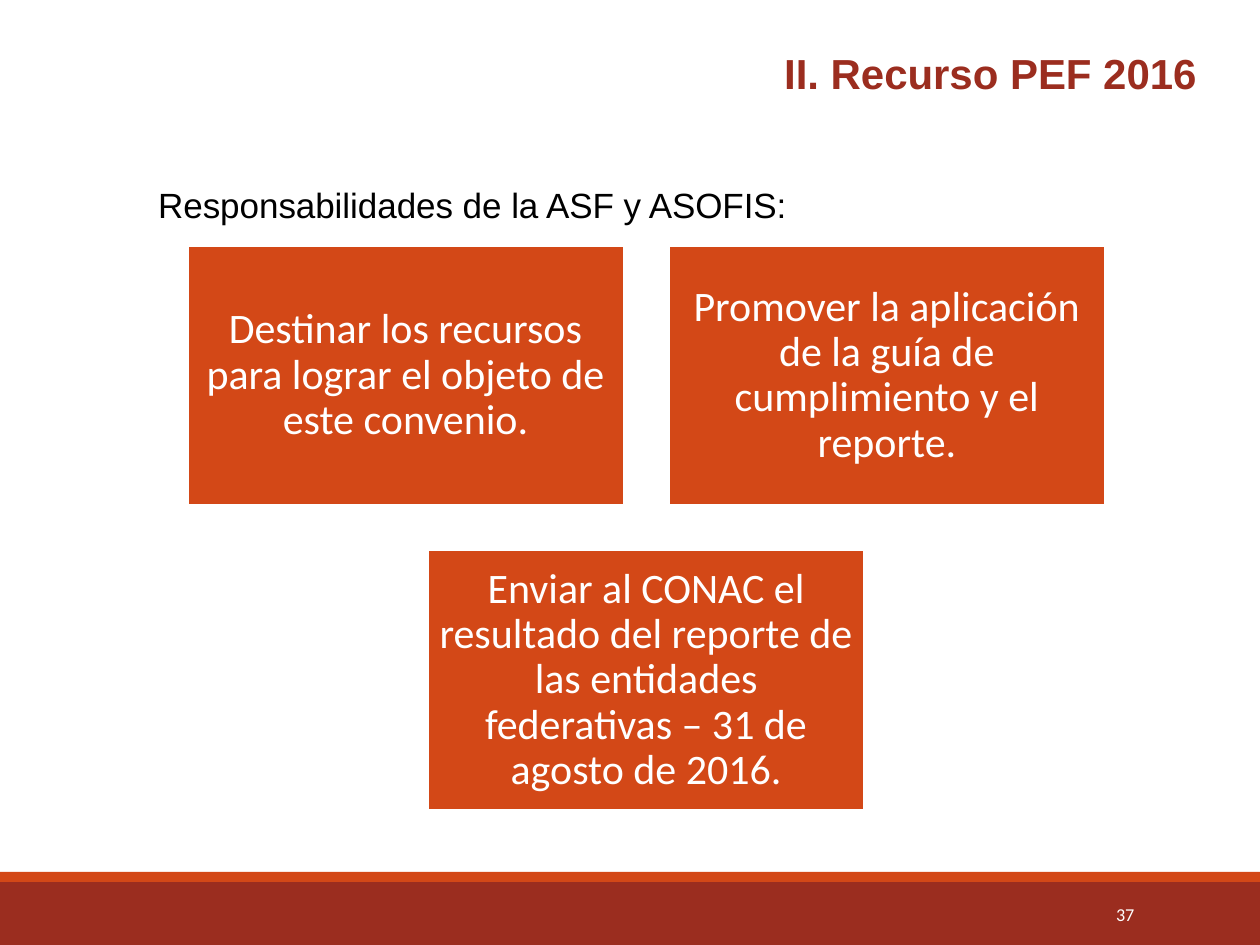
from pptx import Presentation
from pptx.dml.color import RGBColor
from pptx.enum.shapes import MSO_SHAPE
from pptx.enum.text import MSO_ANCHOR, PP_ALIGN
from pptx.util import Inches, Pt

DARK_RED = RGBColor(0x9B, 0x2D, 0x1F)
ORANGE = RGBColor(0xD3, 0x48, 0x17)
WHITE = RGBColor(0xFF, 0xFF, 0xFF)
BLACK = RGBColor(0x00, 0x00, 0x00)

# Slide and card grid, in inches
SLIDE_WIDTH, SLIDE_HEIGHT = 5, 3.75
GRID_LEFT, GRID_TOP = 0.74, 0.97
CARD_WIDTH, CARD_HEIGHT = 1.74, 1.04
GAP = 0.17

# Column, row and wording; the last card is centred under the first two
CARDS = [
    (0, 0, "Destinar los recursos para lograr el objeto de este convenio."),
    (1, 0, "Promover la aplicación de la guía de cumplimiento y el reporte."),
    (0.5, 1, "Enviar al CONAC el resultado del reporte de las entidades "
             "federativas – 31 de agosto de 2016."),
]


def write_text(shape, text, font_name, size, color, alignment, bold=False):
    text_frame = shape.text_frame
    text_frame.word_wrap = True
    text_frame.text = text
    paragraph = text_frame.paragraphs[0]
    paragraph.alignment = alignment
    font = paragraph.runs[0].font
    font.name = font_name
    font.size = Pt(size)
    font.bold = bold
    font.color.rgb = color


def add_label(slide, box, *text_style, anchor=MSO_ANCHOR.TOP, bold=False):
    label = slide.shapes.add_textbox(*map(Inches, box))
    write_text(label, *text_style, bold=bold)
    label.text_frame.vertical_anchor = anchor


def add_rectangle(slide, box, color):
    rectangle = slide.shapes.add_shape(MSO_SHAPE.RECTANGLE, *map(Inches, box))
    rectangle.shadow.inherit = False
    rectangle.fill.solid()
    rectangle.fill.fore_color.rgb = color
    rectangle.line.fill.background()
    return rectangle


def add_card(slide, column, row, text):
    left = GRID_LEFT + column * (CARD_WIDTH + GAP)
    top = GRID_TOP + row * (CARD_HEIGHT + GAP)
    card = add_rectangle(slide, (left, top, CARD_WIDTH, CARD_HEIGHT), ORANGE)
    card.line.color.rgb = WHITE
    card.line.width = Pt(1.25)
    write_text(card, text, "Calibri", 12, WHITE, PP_ALIGN.CENTER)
    text_frame = card.text_frame
    text_frame.vertical_anchor = MSO_ANCHOR.MIDDLE
    text_frame.margin_left = text_frame.margin_right = Inches(0.05)
    text_frame.margin_top = text_frame.margin_bottom = Inches(0.05)
    text_frame.paragraphs[0].line_spacing = 0.9


def main():
    presentation = Presentation()
    presentation.slide_width = Inches(SLIDE_WIDTH)
    presentation.slide_height = Inches(SLIDE_HEIGHT)
    slide = presentation.slides.add_slide(presentation.slide_layouts[6])

    # Footer bands and page number
    add_rectangle(slide, (0, 3.5, SLIDE_WIDTH, 0.25), DARK_RED)
    add_rectangle(slide, (0, 3.46, SLIDE_WIDTH, 0.04), ORANGE)
    add_label(slide, (4.06, 3.53, 0.54, 0.2), "37", "Calibri", 5.2, WHITE,
              PP_ALIGN.RIGHT, anchor=MSO_ANCHOR.MIDDLE)

    # Title and introduction
    add_label(slide, (0.91, 0.14, 3.94, 0.3), "II. Recurso PEF 2016",
              "Arial", 12, DARK_RED, PP_ALIGN.RIGHT, bold=True)
    add_label(slide, (0.53, 0.68, 3.94, 0.27),
              "Responsabilidades de la ASF y ASOFIS:",
              "Arial", 10, BLACK, PP_ALIGN.JUSTIFY)

    # Responsibility cards
    for column, row, text in CARDS:
        add_card(slide, column, row, text)

    presentation.save("out.pptx")


if __name__ == "__main__":
    main()
